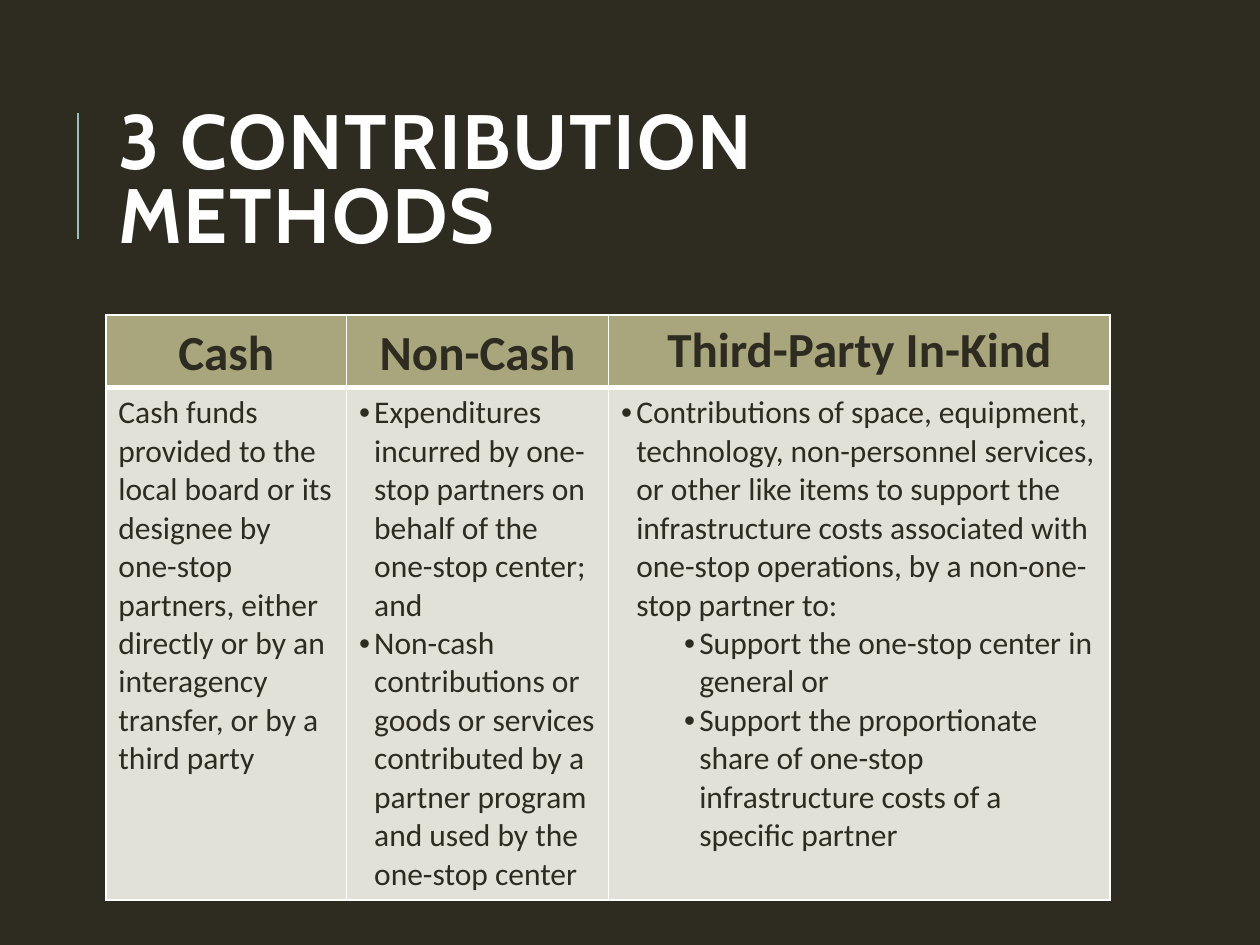
import pptx
import pptx.util
import pptx.dml.color
import pptx.enum.shapes
import pptx.enum.text
from lxml import etree
from pptx.util import Inches

# Content: each column has a header and (text, level) paragraphs; level None = no bullet
TITLE = "3 CONTRIBUTION METHODS"
COLUMNS = [
    {"header": "Cash", "width": 1.91, "spacing": 1.15, "inset": (0.07, 0), "body": [
        ("Cash funds provided to the local board or its designee by one-stop partners, "
         "either directly or by an interagency transfer, or by a third party", None)]},
    {"header": "Non-Cash", "width": 2.08, "spacing": 1.15, "inset": (0.07, 0), "body": [
        ("Expenditures incurred by one-stop partners on behalf of the one-stop center; and", 0),
        ("Non-cash contributions or goods or services contributed by a partner program "
         "and used by the one-stop center", 0)]},
    {"header": "Third-Party In-Kind", "width": 3.98, "spacing": 1, "inset": (0.1, 0.05), "body": [
        ("Contributions of space, equipment, technology, non-personnel services, or other "
         "like items to support the infrastructure costs associated with one-stop "
         "operations, by a non-one-stop partner to:", 0),
        ("Support the one-stop center in general or", 1),
        ("Support the proportionate share of one-stop infrastructure costs of a "
         "specific partner", 1)]},
]
ROW_HEIGHTS = (0.53, 4.05)
LEFT, CONTENT_WIDTH = 0.84, 7.97
BULLET_INDENT, LEVEL_STEP = 0.12, 0.5

THEME = {
    "dark": "2E2B21", "white": "FFFFFF", "accent": "9CBEBD",
    "header": "A9A57C", "body": "E2E1D7",
    "title_font": "Cabin", "text_font": "Calibri",
    "title_size": 44, "header_size": 28, "body_size": 18,
}


def rgb(name):
    return pptx.dml.color.RGBColor.from_string(THEME[name])


def add_element(parent, tag, **attrs):
    element = etree.SubElement(parent, pptx.oxml.ns.qn(tag))
    for key, value in attrs.items():
        element.set(key, str(value))
    return element


def write_text(p, text, font="text_font", size="body_size", color="dark",
               bold=False, align=None, spacing=1, level=None, tracking=0):
    p.alignment = align
    p.line_spacing = spacing
    if level is not None:
        p.level = level
        pPr = p._p.get_or_add_pPr()
        pPr.set("marL", str(Inches(BULLET_INDENT + level * LEVEL_STEP)))
        pPr.set("indent", str(-Inches(BULLET_INDENT)))
        add_element(pPr, "a:buFont", typeface="Arial")
        add_element(pPr, "a:buChar", char="•")
    r = p.add_run()
    r.text = text
    r.font.name = THEME[font]
    r.font.size = pptx.util.Pt(THEME[size])
    r.font.color.rgb = rgb(color)
    r.font.bold = bold
    if tracking:
        r._r.get_or_add_rPr().set("spc", str(tracking * 100))


def format_cell(cell, fill, top, bottom):
    tcPr = cell._tc.get_or_add_tcPr()
    for side, width in (("L", 1), ("R", 1), ("T", top), ("B", bottom)):
        line = add_element(tcPr, f"a:ln{side}", w=pptx.util.Pt(width))
        add_element(add_element(line, "a:solidFill"), "a:srgbClr", val=THEME["white"])
    cell.fill.solid()
    cell.fill.fore_color.rgb = rgb(fill)


def add_title(s):
    sp = s.shapes.title
    sp.left, sp.top = Inches(LEFT), Inches(0.64)
    sp.width, sp.height = Inches(CONTENT_WIDTH), Inches(1.64)
    tf = sp.text_frame
    tf.word_wrap = True
    tf.auto_size = pptx.enum.text.MSO_AUTO_SIZE.NONE
    tf.vertical_anchor = pptx.enum.text.MSO_ANCHOR.MIDDLE
    write_text(tf.paragraphs[0], TITLE, font="title_font", size="title_size", color="white",
               bold=True, align=pptx.enum.text.PP_ALIGN.LEFT, spacing=0.8, tracking=1)


def add_accent_line(s):
    line = s.shapes.add_connector(pptx.enum.shapes.MSO_CONNECTOR.STRAIGHT,
                                  Inches(0.62), Inches(1.9), Inches(0.62), Inches(0.9))
    line.line.color.rgb = rgb("accent")
    line.line.width = pptx.util.Pt(1.5)
    add_element(line._element.spPr, "a:effectLst")


def add_methods_table(s):
    table = s.shapes.add_table(2, len(COLUMNS), Inches(LEFT), Inches(2.5),
                               Inches(CONTENT_WIDTH), Inches(sum(ROW_HEIGHTS))).table
    table.horz_banding = False
    for row, height in zip(table.rows, ROW_HEIGHTS):
        row.height = Inches(height)
    for i, column in enumerate(COLUMNS):
        table.columns[i].width = Inches(column["width"])
        # Header cell
        head = table.cell(0, i)
        side, edge = column["inset"]
        head.margin_left = head.margin_right = Inches(side)
        head.margin_top = head.margin_bottom = Inches(edge)
        format_cell(head, "header", top=1, bottom=3)
        write_text(head.text_frame.paragraphs[0], column["header"], size="header_size",
                   bold=True, align=pptx.enum.text.PP_ALIGN.CENTER, spacing=column["spacing"])
        # Body cell
        body = table.cell(1, i)
        format_cell(body, "body", top=3, bottom=1)
        tf = body.text_frame
        for n, (text, level) in enumerate(column["body"]):
            p = tf.add_paragraph() if n else tf.paragraphs[0]
            write_text(p, text, level=level)


def main():
    prs = pptx.Presentation()
    prs.slide_width, prs.slide_height = Inches(10), Inches(7.5)
    s = prs.slides.add_slide(prs.slide_layouts[5])
    s.background.fill.solid()
    s.background.fill.fore_color.rgb = rgb("dark")
    add_accent_line(s)
    add_title(s)
    add_methods_table(s)
    prs.save("out.pptx")


if __name__ == "__main__":
    main()
